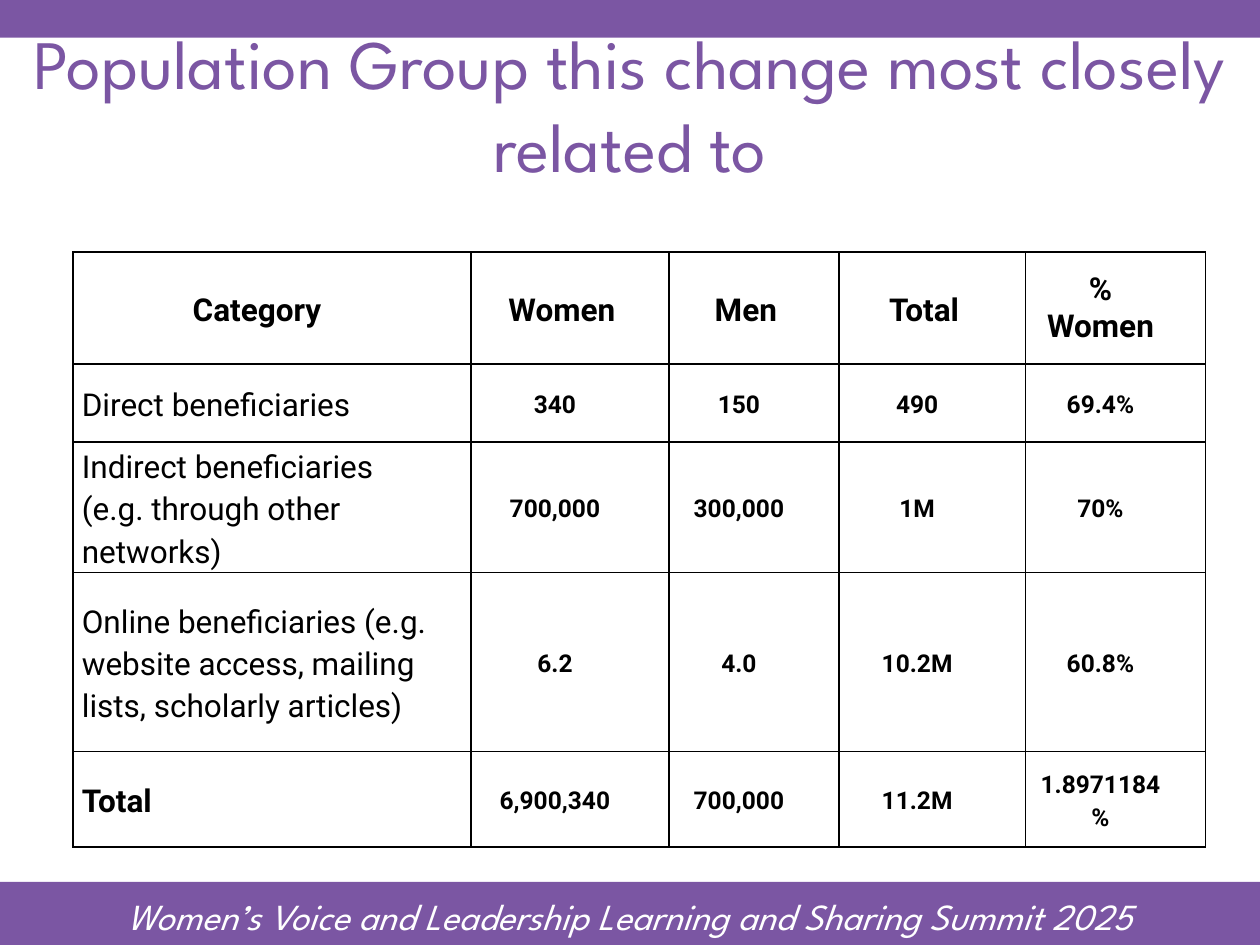
from dataclasses import dataclass
from typing import Any

from lxml import etree
from pptx import Presentation
from pptx.dml.color import RGBColor
from pptx.enum.shapes import MSO_SHAPE
from pptx.enum.text import MSO_ANCHOR, PP_ALIGN
from pptx.oxml.ns import qn
from pptx.util import Inches, Pt

PURPLE = RGBColor(0x7B, 0x56, 0xA3)
WHITE = RGBColor(0xFF, 0xFF, 0xFF)
BLACK = RGBColor(0, 0, 0)
RECTANGLE = MSO_SHAPE.RECTANGLE
MIDDLE, TOP = MSO_ANCHOR.MIDDLE, MSO_ANCHOR.TOP
LEFT, CENTER, JUSTIFY = PP_ALIGN.LEFT, PP_ALIGN.CENTER, PP_ALIGN.JUSTIFY

UNIT = Inches(0.1)
COLUMNS, ROWS = 100, 75
COLUMN_WIDTHS = (31.6, 15.7, 13.5, 14.8, 14.3)
ROW_HEIGHTS = (8.9, 6.2, 9.8, 14.2, 7.6)
RIGHT_INSET, HEADING_INSET = 3.1, 2

BENEFICIARIES = (
    ("Category", "Women", "Men", "Total", "%\nWomen"),
    ("Direct beneficiaries", "340", "150", "490", "69.4%"),
    ("Indirect beneficiaries (e.g. through other networks)",
     "700,000", "300,000", "1M", "70%"),
    ("Online beneficiaries (e.g. website access, mailing lists, scholarly articles)",
     "6.2", "4.0", "10.2M", "60.8%"),
    ("Total", "6,900,340", "700,000", "11.2M", "1.8971184%"),
)


def span(units):
    return round(units * UNIT)


def make_line(tag, width, color):
    line = etree.Element(qn(tag), w=str(Pt(width)))
    fill = etree.SubElement(line, qn("a:solidFill"))
    etree.SubElement(fill, qn("a:srgbClr"), val=str(color))
    return line


@dataclass
class SlideBuilder:
    """Draws styled elements on a slide in grid columns and rows."""

    slide: Any
    display_font: str = "League Spartan"
    body_font: str = "Roboto"
    accent: RGBColor = PURPLE
    border_width: float = 1

    def band(self, row, height):
        band = self.slide.shapes.add_shape(
            RECTANGLE, 0, span(row), span(COLUMNS), span(height))
        band.shadow.inherit = False
        band.fill.solid()
        band.fill.fore_color.rgb = self.accent
        band.line.fill.background()

    def add_text(self, frame, text, size, color, font, align=CENTER,
                 spacing=None, bold=False, italic=False):
        for index, wording in enumerate(text.split("\n")):
            paragraph = frame.add_paragraph() if index else frame.paragraphs[0]
            paragraph.alignment = align
            if spacing:
                paragraph.line_spacing = spacing
            run = paragraph.add_run()
            run.text = wording
            run.font.size = Pt(size)
            run.font.name = font
            run.font.bold = bold
            run.font.italic = italic
            run.font.color.rgb = color
        return run

    def heading(self, text, column, row, width, height, size, color,
                anchor=MIDDLE, outline=None, **style):
        box = self.slide.shapes.add_textbox(
            span(column), span(row), span(width), span(height))
        frame = box.text_frame
        frame.word_wrap = True
        frame.vertical_anchor = anchor
        run = self.add_text(frame, text, size, color, self.display_font, **style)
        if outline:
            properties = run._r.get_or_add_rPr()
            properties.insert(0, make_line("a:ln", outline, color))

    def border(self, cell):
        properties = cell._tc.get_or_add_tcPr()
        for index, side in enumerate("LRTB"):
            properties.insert(
                index, make_line(f"a:ln{side}", self.border_width, BLACK))

    def cell(self, cell, text, row, column):
        is_header, is_label = row == 0, column == 0
        is_total = row == len(BENEFICIARIES) - 1
        shifted = is_header and 0 < column < len(COLUMN_WIDTHS) - 1
        cell.vertical_anchor = MIDDLE
        cell.margin_left = span(0.7)
        cell.margin_right = span(HEADING_INSET if shifted else RIGHT_INSET)
        cell.margin_top = cell.margin_bottom = 0
        cell.fill.background()
        self.border(cell)
        align = CENTER
        if is_label and not is_header:
            align = JUSTIFY if row == 1 or is_total else LEFT
        self.add_text(
            cell.text_frame, text, 18 if is_header or is_label else 14, BLACK,
            self.body_font, align, spacing=None if "\n" in text else 1.15,
            bold=is_header or is_total or not is_label)

    def table(self, data, column, row):
        table = self.slide.shapes.add_table(
            len(data), len(data[0]), span(column), span(row),
            span(sum(COLUMN_WIDTHS)), span(sum(ROW_HEIGHTS))).table
        table.first_row = table.horz_banding = False
        for table_column, width in zip(table.columns, COLUMN_WIDTHS):
            table_column.width = span(width)
        for table_row, height in zip(table.rows, ROW_HEIGHTS):
            table_row.height = span(height)
        for r, entries in enumerate(data):
            for c, text in enumerate(entries):
                self.cell(table.cell(r, c), text, r, c)


def main():
    deck = Presentation()
    deck.slide_width, deck.slide_height = span(COLUMNS), span(ROWS)
    builder = SlideBuilder(deck.slides.add_slide(deck.slide_layouts[6]))
    builder.band(0, 3)
    builder.band(70, 5)
    builder.heading(
        "Women’s Voice and Leadership Learning and Sharing Summit 2025",
        1.7, 70.2, 96.6, 4.8, 21, WHITE, anchor=TOP, spacing=1.07, italic=True)
    builder.heading("Population Group this change most closely related to",
                    0, 3.6, COLUMNS, 9.2, 39.6, PURPLE, outline=0.75)
    builder.table(BENEFICIARIES, 5.8, 20)
    deck.save("out.pptx")


if __name__ == "__main__":
    main()
